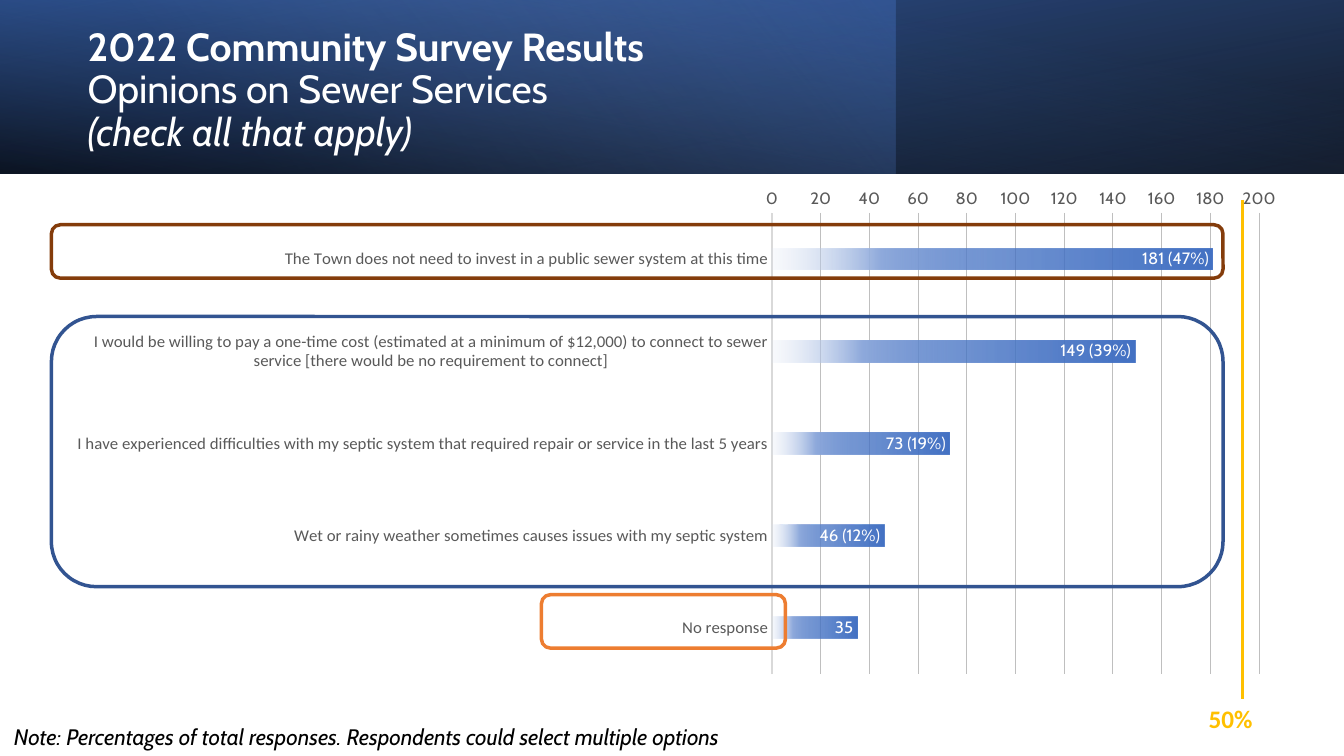
from dataclasses import dataclass

from lxml import etree
from pptx import Presentation
from pptx import util as u
from pptx.chart.data import CategoryChartData
from pptx.dml.color import RGBColor
from pptx.enum import chart as ch, shapes, text
from pptx.oxml import parse_xml
from pptx.oxml.ns import nsdecls, qn


@dataclass(frozen=True)
class Theme:
    heading: str = "Cabin"
    body: str = "Calibri"
    white: str = "FFFFFF"
    black: str = "000000"
    grey: str = "595959"
    grid: str = "BFBFBF"
    axis: str = "D9D9D9"
    blue: str = "4472C4"
    deep_blue: str = "2F5597"
    light_blue: str = "8FAADC"
    pale_blue: str = "DAE3F3"
    ring_blue: str = "325491"
    brown: str = "843C0B"
    orange: str = "ED7D31"
    gold: str = "FFC000"
    title_size: int = 28
    marker_size: int = 18
    note_size: int = 16
    chart_size: int = 12


THEME = Theme()
WIDTH, HEIGHT = 13.33, 7.5

RESPONSES = [
    ("The Town does not need to invest in a public sewer system at this time", 181, "181 (47%)"),
    ("I would be willing to pay a one-time cost (estimated at a minimum of $12,000) to connect "
     "to sewer service [there would be no requirement to connect]", 149, "149 (39%)"),
    ("I have experienced difficulties with my septic system that required repair or service "
     "in the last 5 years", 73, "73 (19%)"),
    ("Wet or rainy weather sometimes causes issues with my septic system", 46, "46 (12%)"),
    ("No response", 35, None),
]


def inches(*lengths):
    return [u.Inches(length) for length in lengths]


def style_font(font, name, size, color, **flags):
    font.name, font.size = name, u.Pt(size)
    font.color.rgb = RGBColor.from_string(color)
    for flag, value in flags.items():
        setattr(font, flag, value)


def style_line(line, color, width):
    line.color.rgb = RGBColor.from_string(color)
    line.width = u.Pt(width)


def fill_gradient(fill, element, stops, angle):
    """Stops are (position %, colour, opacity %)."""
    fill.background()
    colors = "".join(
        f'<a:gs pos="{pos * 1000}"><a:srgbClr val="{color}">'
        f'<a:alpha val="{opacity * 1000}"/></a:srgbClr></a:gs>'
        for pos, color, opacity in stops)
    gradient = parse_xml(
        f'<a:gradFill {nsdecls("a")} rotWithShape="1"><a:gsLst>{colors}</a:gsLst>'
        f'<a:lin ang="{angle * 60000}" scaled="0"/></a:gradFill>')
    empty = element.find(f".//{qn('a:noFill')}")
    empty.getparent().replace(empty, gradient)


def add_text(slide, box, runs, wrap=False, anchor=text.MSO_ANCHOR.TOP, spacing=1.0):
    """Runs are (wording, font settings), one line each."""
    frame = slide.shapes.add_textbox(*inches(*box)).text_frame
    frame.word_wrap, frame.vertical_anchor = wrap, anchor
    paragraph = frame.paragraphs[0]
    paragraph.line_spacing = spacing
    for index, (wording, settings) in enumerate(runs):
        if index:
            paragraph.add_line_break()
        run = paragraph.add_run()
        run.text = wording
        style_font(run.font, **settings)


def add_banner(slide, box):
    left, top, width, height = box
    layers = [  # share of width, stops, angle, rotation, mirrored
        (1, [(0, THEME.black, 96), (100, THEME.deep_blue, 100)], 100, 180, True),
        (2 / 3, [(0, THEME.blue, 41), (74, THEME.light_blue, 0)], 140, 0, False),
        (1, [(0, THEME.black, 63), (78, THEME.blue, 15)], 260, 0, True),
    ]
    for share, stops, angle, rotation, mirrored in layers:
        layer = slide.shapes.add_shape(
            shapes.MSO_SHAPE.RECTANGLE, *inches(left, top, width * share, height))
        layer.shadow.inherit = False
        fill_gradient(layer.fill, layer._element, stops, angle)
        layer.line.fill.background()
        layer.rotation = rotation
        if mirrored:
            layer._element.spPr.find(qn("a:xfrm")).set("flipH", "1")

    base = dict(name=THEME.heading, size=THEME.title_size, color=THEME.white)
    add_text(slide, (left + 0.77, top + 0.27, 7.72, 1.27), [
        ("2022 Community Survey Results", dict(base, bold=True)),
        ("Opinions on Sewer Services", base),
        ("(check all that apply)", dict(base, italic=True)),
    ], wrap=True, anchor=text.MSO_ANCHOR.MIDDLE, spacing=0.9)


def set_plot_layout(chart, **shares):
    area = chart._chartSpace.chart.plotArea
    for old in area.findall(qn("c:layout")):
        area.remove(old)
    layout = etree.Element(qn("c:layout"))
    manual = etree.SubElement(layout, qn("c:manualLayout"))
    settings = dict(layoutTarget="inner", xMode="edge", yMode="edge", **shares)
    for tag, value in settings.items():
        etree.SubElement(manual, qn(f"c:{tag}")).set("val", str(value))
    area.insert(0, layout)


def add_responses_chart(slide, box):
    data = CategoryChartData()
    data.categories = [answer for answer, _, _ in RESPONSES]
    data.add_series("Series 1", [count for _, count, _ in RESPONSES])
    chart = slide.shapes.add_chart(
        ch.XL_CHART_TYPE.BAR_CLUSTERED, *inches(*box), data).chart
    chart.has_legend = chart.has_title = False
    style_font(chart.font, THEME.body, 10, THEME.black)
    set_plot_layout(chart, x=0.58, y=0.02, w=0.39, h=0.91)

    # Axes
    answers, counts = chart.category_axis, chart.value_axis
    for axis, face in ((answers, THEME.body), (counts, THEME.heading)):
        axis.major_tick_mark = axis.minor_tick_mark = ch.XL_TICK_MARK.NONE
        style_font(axis.tick_labels.font, face, THEME.chart_size, THEME.grey)
    answers.reverse_order = True
    answers.crosses = ch.XL_AXIS_CROSSES.MAXIMUM
    style_line(answers.format.line, THEME.axis, 1.5)
    for name, value in dict(minimum_scale=0, maximum_scale=200, major_unit=20,
                            has_major_gridlines=True).items():
        setattr(counts, name, value)
    counts.format.line.fill.background()
    style_line(counts.major_gridlines.format.line, THEME.grid, 0.75)

    # Bars
    plot = chart.plots[0]
    plot.gap_width, plot.overlap, plot.vary_by_categories = 326, -58, False
    bars = plot.series[0]
    fill_gradient(bars.format.fill, bars._element, [
        (0, THEME.blue, 100), (51, THEME.blue, 75),
        (75, THEME.light_blue, 100), (100, THEME.pale_blue, 15)], 180)

    # Bar labels
    label_font = (THEME.heading, THEME.chart_size, THEME.white)
    labels = bars.data_labels
    labels.show_value = True
    labels.position = ch.XL_LABEL_POSITION.INSIDE_END
    style_font(labels.font, *label_font)
    for index, (_, _, caption) in enumerate(RESPONSES):
        if caption:
            label = bars.points[index].data_label
            run = label.text_frame.paragraphs[0].add_run()
            run.text = caption
            style_font(run.font, *label_font)
            label.position = ch.XL_LABEL_POSITION.INSIDE_END


def add_highlights(slide, left, width):
    rings = [
        ((left, 3.14, width, 2.68), THEME.ring_blue),
        ((left, 2.23, width, 0.53), THEME.brown),
        ((5.37, 5.9, 2.42, 0.53), THEME.orange),
    ]
    for box, color in rings:
        ring = slide.shapes.add_shape(shapes.MSO_SHAPE.ROUNDED_RECTANGLE, *inches(*box))
        ring.shadow.inherit = False
        ring.fill.background()
        style_line(ring.line, color, 2.5)


def add_half_marker(slide, x, top, bottom):
    marker = slide.shapes.add_connector(
        shapes.MSO_CONNECTOR.STRAIGHT, *inches(x, top, x, bottom))
    style_line(marker.line, THEME.gold, 2.25)
    etree.SubElement(marker._element.spPr, qn("a:effectLst"))
    add_text(slide, (x - 0.43, bottom, 0.64, 0.4), [
        ("50%", dict(name=THEME.body, size=THEME.marker_size, color=THEME.gold, bold=True))])


def add_note(slide, box):
    add_text(slide, box, [
        ("Note: Percentages of total responses. Respondents could select multiple options",
         dict(name=THEME.heading, size=THEME.note_size, color=THEME.black, italic=True))])


def main():
    deck = Presentation()
    deck.slide_width, deck.slide_height = inches(WIDTH, HEIGHT)
    slide = deck.slides.add_slide(deck.slide_layouts[6])
    add_banner(slide, (0, 0, WIDTH, 1.72))
    add_responses_chart(slide, (0.47, 1.88, 12.39, 5.16))
    add_note(slide, (0.04, 7.12, 7.83, 0.37))
    add_highlights(slide, left=0.51, width=11.62)
    add_half_marker(slide, x=12.32, top=1.98, bottom=6.93)
    deck.save("out.pptx")


if __name__ == "__main__":
    main()
